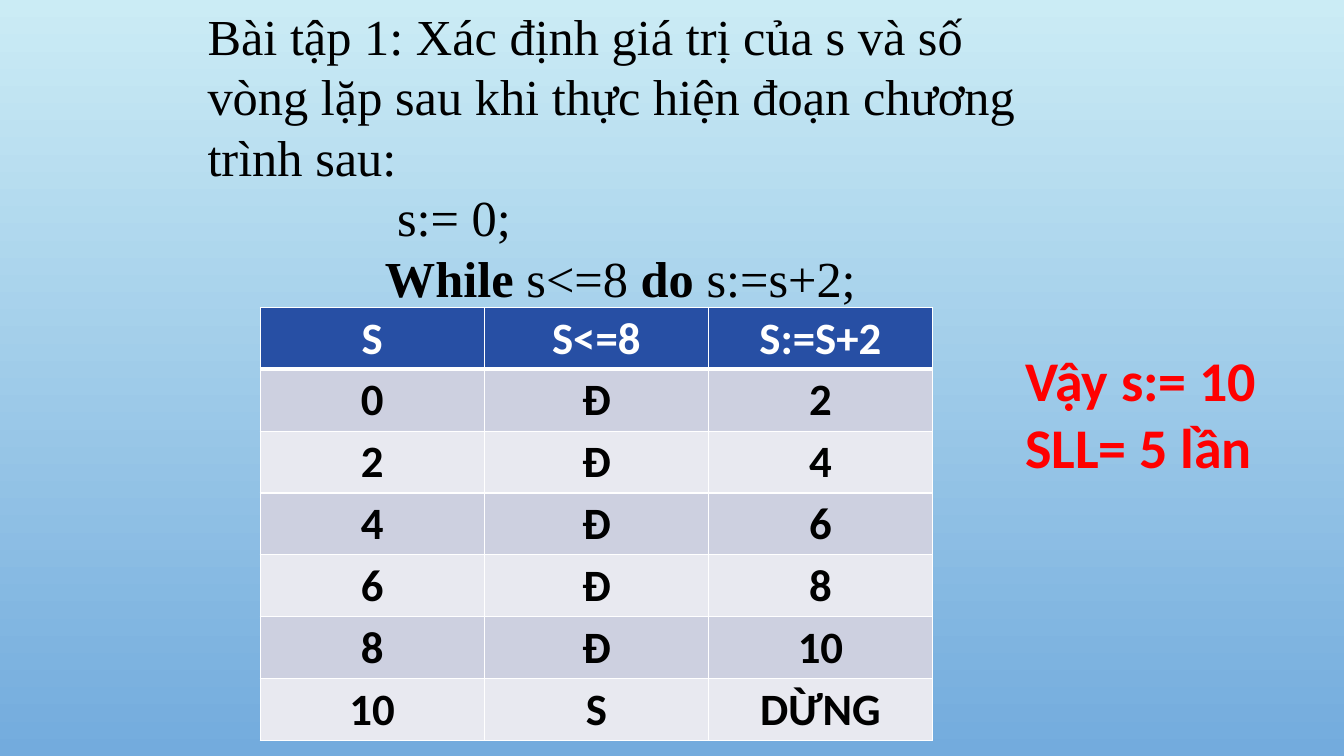
from lxml import etree
from pptx import Presentation
from pptx.dml.color import RGBColor
from pptx.enum.text import MSO_ANCHOR, PP_ALIGN
from pptx.oxml.ns import qn
from pptx.util import Inches, Pt

CENTER = PP_ALIGN.CENTER
TOP = MSO_ANCHOR.TOP

THEME = {
    "sky_top": "CBECF5", "sky_bottom": "73ABDD",
    "header": "274FA4", "bands": ("CDD0E0", "E8E9F0"),
    "border": "FFFFFF", "header_text": "FFFFFF",
    "text": "000000", "answer": "FF0000",
    "serif": "Times New Roman", "sans": "Calibri",
    "exercise_size": 36, "table_size": 32, "answer_size": 40,
}


def style(font, face, size, color, bold):
    font.name = THEME[face]
    font.size = Pt(THEME[size])
    font.color.rgb = RGBColor.from_string(THEME[color])
    font.bold = bold


def add_border(cell, side, width):
    line = etree.SubElement(cell._tc.get_or_add_tcPr(), qn(f"a:{side}"), w=str(Pt(width)))
    fill = etree.SubElement(line, qn("a:solidFill"))
    etree.SubElement(fill, qn("a:srgbClr"), val=THEME["border"])


prs = Presentation()
prs.slide_width, prs.slide_height = Inches(13.33), Inches(7.5)
slide = prs.slides.add_slide(prs.slide_layouts[6])

# Background: vertical gradient
sky = slide.background.fill
sky.gradient()
sky.gradient_angle = 270
for stop, key in zip(sky.gradient_stops, ("sky_top", "sky_bottom")):
    stop.color.rgb = RGBColor.from_string(THEME[key])

# Exercise: indent and runs (text, bold) of each paragraph
exercise_lines = [
    (0, [("Bài tập 1: Xác định giá trị của s và số vòng lặp sau khi "
          "thực hiện đoạn chương trình sau:", False)]),
    (1.88, [("s:= 0;", False)]),
    (1.76, [("While", True), (" s<=8 ", False), ("do ", True), ("s:=s+2;", False)]),
]
exercise = slide.shapes.add_textbox(Inches(1.96), 0, Inches(8.79), Inches(3.74)).text_frame
exercise.word_wrap = True
for i, (indent, pieces) in enumerate(exercise_lines):
    line = exercise.paragraphs[0] if i == 0 else exercise.add_paragraph()
    line._p.get_or_add_pPr().set("marL", str(Inches(indent)))
    for words, bold in pieces:
        run = line.add_run()
        run.text = words
        style(run.font, "serif", "exercise_size", "text", bold)

# Trace table: each step starts from the previous sum
trace_rows = [("S", "S<=8", "S:=S+2")]
trace_rows += [(str(s), "Đ", str(s + 2)) for s in range(0, 10, 2)]
trace_rows.append(("10", "S", "DỪNG"))
trace = slide.shapes.add_table(len(trace_rows), 3, Inches(2.58), Inches(3.05),
                               Inches(6.67), Inches(4.26)).table
for r, values in enumerate(trace_rows):
    is_header = r == 0
    for c, value in enumerate(values):
        cell = trace.cell(r, c)
        cell.text = value
        cell.vertical_anchor = TOP
        cell.margin_left = cell.margin_right = Inches(0.07)
        cell.margin_top = cell.margin_bottom = Inches(0.04)
        paragraph = cell.text_frame.paragraphs[0]
        paragraph.alignment = CENTER
        style(paragraph.runs[0].font, "sans", "table_size",
              "header_text" if is_header else "text", True)
        for side in ("lnL", "lnR", "lnT", "lnB"):
            under_header = (is_header and side == "lnB") or (r == 1 and side == "lnT")
            add_border(cell, side, 3 if under_header else 1)
        cell.fill.solid()
        cell.fill.fore_color.rgb = RGBColor.from_string(
            THEME["header"] if is_header else THEME["bands"][(r - 1) % 2])

# Answer
answer = slide.shapes.add_textbox(Inches(10.07), Inches(3.38), Inches(2.79), Inches(1.45)).text_frame
answer.word_wrap = False
answer.text = "Vậy s:= 10\nSLL= 5 lần"
for paragraph in answer.paragraphs:
    style(paragraph.runs[0].font, "sans", "answer_size", "answer", True)

prs.save("out.pptx")
